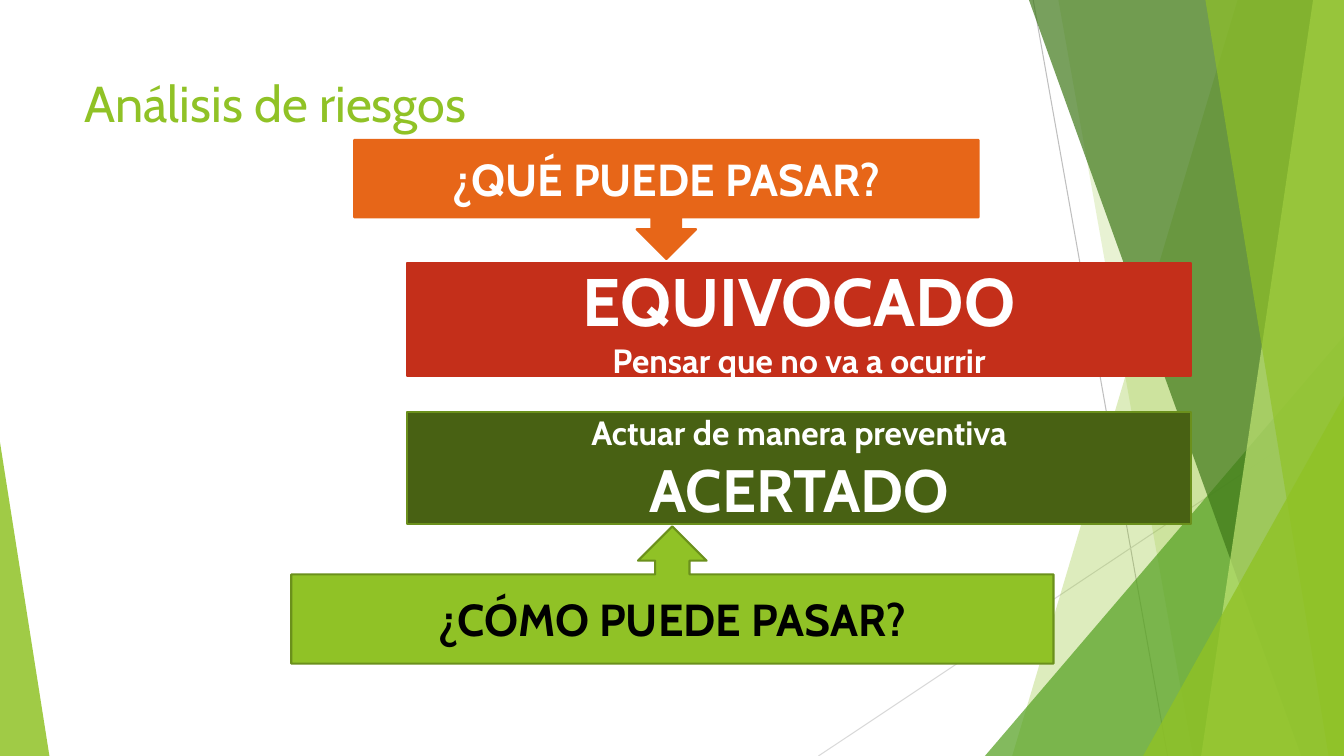
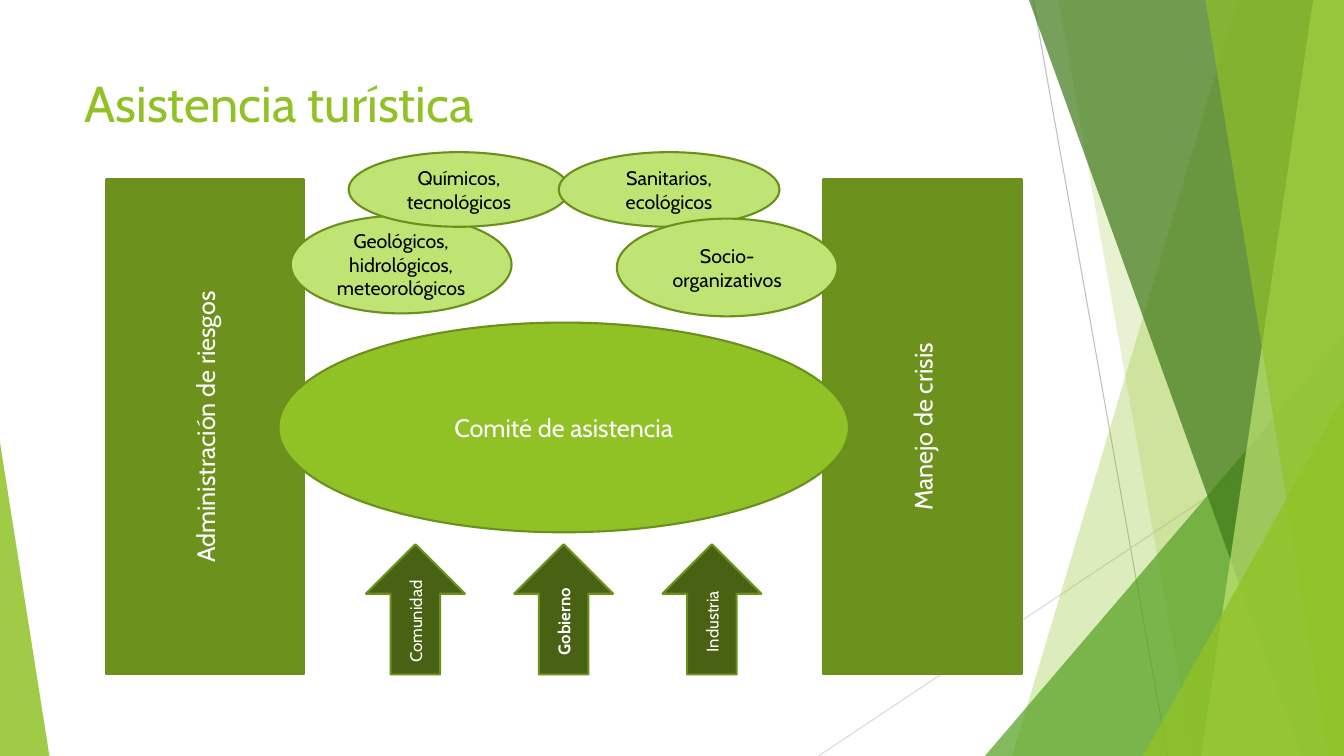
import pptx
import pptx.util
import pptx.dml.color
import pptx.enum.shapes
import pptx.enum.text
import pptx.oxml
import pptx.oxml.ns
import lxml.etree
from dataclasses import dataclass
from typing import Any

Pt = pptx.util.Pt
Kind = pptx.enum.shapes.MSO_SHAPE
Align = pptx.enum.text.PP_ALIGN
Anchor = pptx.enum.text.MSO_ANCHOR
qn = pptx.oxml.ns.qn


# Colours, type sizes and page measures
@dataclass(frozen=True)
class Theme:
    font: str = "Cabin"
    wide: float = 960
    high: float = 540
    edge: float = 1.5
    hair: float = 0.75
    white: str = "FFFFFF"
    black: str = "000000"
    lime: str = "90C226"
    pale: str = "C0E474"
    leaf: str = "54A021"
    pine: str = "3F7819"
    olive: str = "6C921D"
    rim: str = "6B901C"
    moss: str = "486113"
    orange: str = "E76618"
    red: str = "C42F1A"
    grey: str = "BFBFBF"
    mist: str = "D9D9D9"
    title: float = 36
    huge: float = 48
    large: float = 42.7
    head: float = 32
    sub: float = 24
    body: float = 18
    note: float = 14
    small: float = 12


T = Theme()


@dataclass(frozen=True)
class Box:
    x: float
    y: float
    w: float
    h: float


@dataclass(frozen=True)
class Line:
    text: str
    size: float
    color: str = T.white
    bold: bool = False


@dataclass(frozen=True)
class Block:
    kind: Any
    box: Box
    fill: str
    lines: tuple[Line, ...]
    rim: str = T.rim
    turn: bool = False


# A band runs from its slanted left side to the right page edge
@dataclass(frozen=True)
class Band:
    top: float
    foot: float
    fill: str
    alpha: int


@dataclass(frozen=True)
class Wedge:
    box: Box
    peak: float
    fill: str
    alpha: int


@dataclass(frozen=True)
class Ray:
    x1: float
    y1: float
    x2: float
    y2: float
    color: str


RAYS = (
    Ray(738, 0, 834, T.high, T.grey),
    Ray(T.wide, 290, 584.6, T.high, T.mist),
)
DECOR = (
    Band(884, 723, T.lime, 30),
    Band(756, 852, T.lime, 20),
    Wedge(Box(703.5, 240, 256.5, 300), 1, T.leaf, 72),
    Band(735, 929.5, T.pine, 70),
    Band(938, 858, T.pale, 70),
    Band(861, 949, T.lime, 65),
    Wedge(Box(816.5, 283, 143.5, 257), 1, T.lime, 80),
    Wedge(Box(0, 316, 35.3, 224), 0, T.lime, 85),
)


# Drawing helpers
def rgb(code: str) -> Any:
    return pptx.dml.color.RGBColor.from_string(code)


def paint(shape: Any, color: str, alpha: int = 100) -> None:
    shape.shadow.inherit = False
    shape.fill.solid()
    shape.fill.fore_color.rgb = rgb(color)
    if alpha < 100:
        tint = shape.element.spPr.find(".//" + qn("a:srgbClr"))
        lxml.etree.SubElement(tint, qn("a:alpha"), val=str(alpha * 1000))


def place(slide: Any, kind: Any, box: Box) -> Any:
    return slide.shapes.add_shape(
        kind, Pt(box.x), Pt(box.y), Pt(box.w), Pt(box.h))


def write(shape: Any, lines: tuple[Line, ...], align: Any, anchor: Any) -> None:
    frame = shape.text_frame
    frame.word_wrap = True
    frame.vertical_anchor = anchor
    for i, line in enumerate(lines):
        para = frame.add_paragraph() if i else frame.paragraphs[0]
        para.text = line.text
        para.alignment = align
        font = para.font
        font.name, font.size, font.bold = T.font, Pt(line.size), line.bold
        font.color.rgb = rgb(line.color)


def add_ray(slide: Any, ray: Ray) -> None:
    line = slide.shapes.add_connector(
        pptx.enum.shapes.MSO_CONNECTOR.STRAIGHT,
        Pt(ray.x1), Pt(ray.y1), Pt(ray.x2), Pt(ray.y2))
    line.line.color.rgb = rgb(ray.color)
    line.line.width = Pt(T.hair)
    lxml.etree.SubElement(line.element.spPr, qn("a:effectLst"))


def add_decor(slide: Any, part: Band | Wedge) -> None:
    if isinstance(part, Band):
        pen = slide.shapes.build_freeform(Pt(part.top), 0)
        pen.add_line_segments([
            (Pt(T.wide), 0), (Pt(T.wide), Pt(T.high)),
            (Pt(part.foot), Pt(T.high))], close=True)
        shape = pen.convert_to_shape()
    else:
        shape = place(slide, Kind.ISOSCELES_TRIANGLE, part.box)
        shape.adjustments[0] = part.peak
    paint(shape, part.fill, part.alpha)
    shape.line.fill.background()


def add_block(slide: Any, block: Block) -> None:
    shape = place(slide, block.kind, block.box)
    paint(shape, block.fill)
    shape.line.color.rgb = rgb(block.rim)
    shape.line.width = Pt(T.edge)
    write(shape, block.lines, Align.CENTER, Anchor.MIDDLE)
    if block.turn:
        shape.element.find(".//" + qn("a:bodyPr")).set("vert", "vert270")


def add_page(deck: Any, title: str, blocks: list[Block]) -> None:
    slide = deck.slides.add_slide(deck.slide_layouts[6])
    for ray in RAYS:
        add_ray(slide, ray)
    for part in DECOR:
        add_decor(slide, part)
    head = slide.shapes.add_textbox(Pt(53.3), Pt(48.2), Pt(676.8), Pt(103.7))
    write(head, (Line(title, T.title, T.lime),), Align.LEFT, Anchor.TOP)
    for block in blocks:
        add_block(slide, block)


# Slide 1: two questions and the two answers
def risks() -> list[Block]:
    return [
        Block(Kind.UP_ARROW_CALLOUT, Box(208, 376, 544.5, 98), T.lime,
              (Line("¿CÓMO PUEDE PASAR?", T.head, T.black, True),)),
        Block(Kind.DOWN_ARROW_CALLOUT, Box(253, 100, 446, 85), T.orange,
              (Line("¿QUÉ PUEDE PASAR?", T.head, bold=True),), T.orange),
        Block(Kind.RECTANGLE, Box(291, 188, 559.5, 80.6), T.red,
              (Line("EQUIVOCADO", T.huge, bold=True),
               Line("Pensar que no va a ocurrir", T.sub, bold=True)), T.red),
        Block(Kind.RECTANGLE, Box(291, 294, 559.5, 80.6), T.moss,
              (Line("Actuar de manera preventiva", T.sub, bold=True),
               Line("ACERTADO", T.large, bold=True))),
    ]


# Slide 2: pillars, committee, supporters and hazards
def support() -> list[Block]:
    sides = ((75.6, "Administración de riesgos"), (588.2, "Manejo de crisis"))
    blocks = [
        Block(Kind.RECTANGLE, Box(x, 128.2, 141.8, 353.5), T.olive,
              (Line(text, T.body),), turn=True)
        for x, text in sides]
    blocks.append(Block(Kind.OVAL, Box(198.9, 230.4, 407.5, 149.8), T.lime,
                        (Line("Comité de asistencia", T.body),)))
    groups = (("Comunidad", False), ("Gobierno", True), ("Industria", False))
    blocks += [
        Block(Kind.UP_ARROW, Box(261.4 + 105.9 * i, 388.8, 70.6, 92.9), T.moss,
              (Line(text, T.small, bold=bold),), turn=True)
        for i, (text, bold) in enumerate(groups)]
    risky = (
        (207.7, 154.1, 69.8, "Geológicos, hidrológicos, meteorológicos"),
        (249, 108.7, 53.3, "Químicos, tecnológicos"),
        (399.1, 108.7, 53.3, "Sanitarios, ecológicos"),
        (440.6, 156.2, 69.8, "Socio-organizativos"),
    )
    blocks += [
        Block(Kind.OVAL, Box(x, y, 157.7, h), T.pale,
              (Line(text, T.note, T.black),))
        for x, y, h, text in risky]
    return blocks


def main() -> None:
    deck = pptx.Presentation()
    deck.slide_width, deck.slide_height = Pt(T.wide), Pt(T.high)
    add_page(deck, "Análisis de riesgos", risks())
    add_page(deck, "Asistencia turística", support())
    deck.save("out.pptx")


if __name__ == "__main__":
    main()
